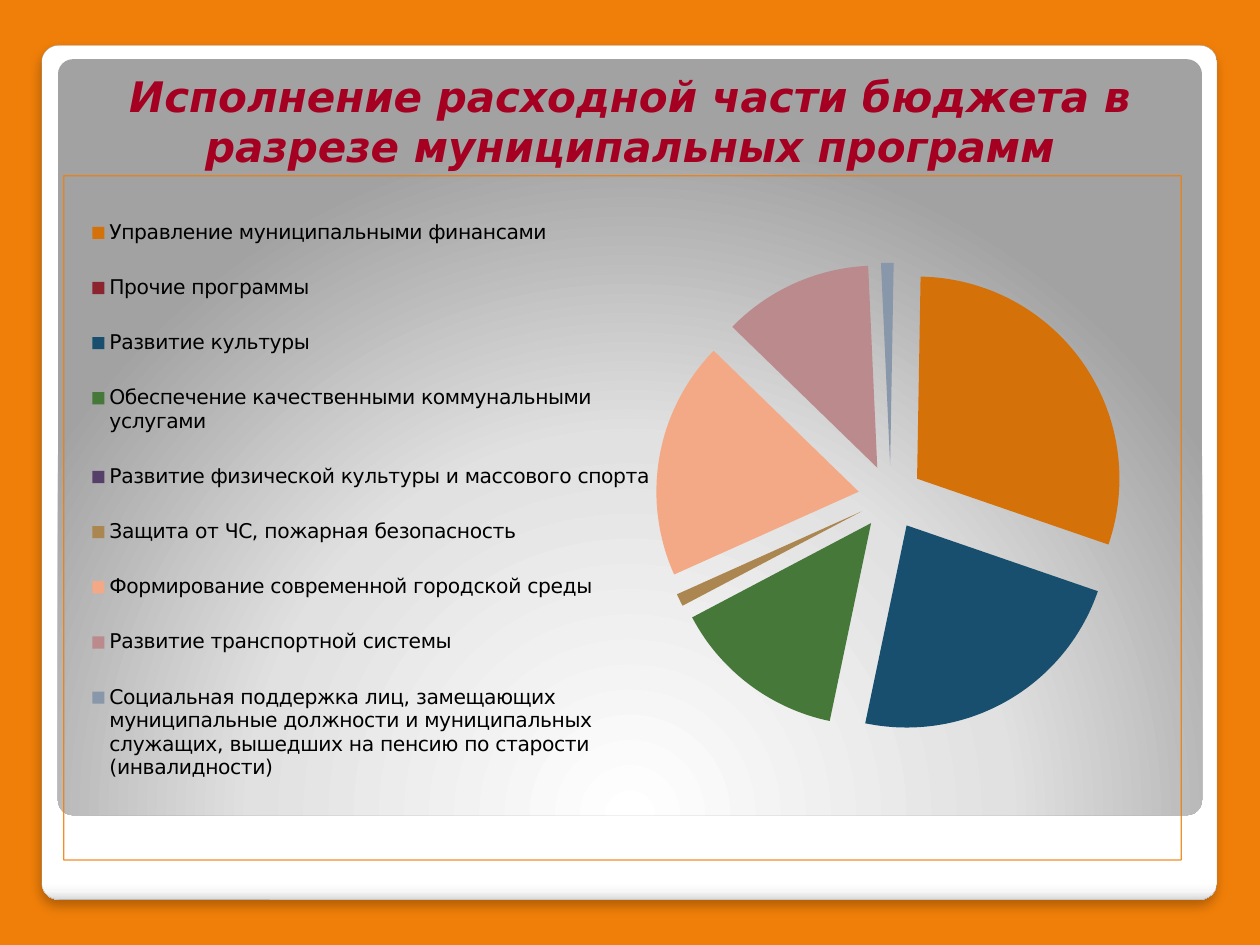
from lxml import etree
from pptx import Presentation
from pptx.chart.data import CategoryChartData
from pptx.dml.color import RGBColor
from pptx.enum.chart import XL_CHART_TYPE as ChartType, XL_LEGEND_POSITION as LegendPosition
from pptx.enum.shapes import MSO_SHAPE as Shape
from pptx.enum.text import MSO_ANCHOR as Anchor, PP_ALIGN as Align
from pptx.oxml import parse_xml
from pptx.oxml.ns import nsdecls, qn
from pptx.util import Inches, Pt

FONT = "DejaVu Sans"
ORANGE = RGBColor(0xF0, 0x7F, 0x09)
CRIMSON = RGBColor(0xA5, 0x00, 0x21)
GRAY = RGBColor(0xA4, 0xA4, 0xA4)
BLACK = RGBColor(0, 0, 0)
WIDTH, HEIGHT = Inches(10), Inches(7.5)

CARD_STOPS = [(0, "FFFFFF"), (98, "FFFFFF"), (99, "F7F7F7"), (100, "DADADA")]
PANEL_STOPS = [(0, "FFFFFF"), (55, "E1E1E1"), (100, "A2A2A2")]
LINEAR = '<a:lin ang="5400000" scaled="0"/>'
RADIAL = ('<a:path path="circle"><a:fillToRect l="50000" t="175000" '
          'r="50000" b="-75000"/></a:path>')
CARD_SHADOW = (f'<a:effectLst {nsdecls("a")}><a:outerShdw blurRad="76200" dist="50800" '
               'dir="5400000" algn="tl" rotWithShape="0"><a:srgbClr val="000000">'
               '<a:alpha val="25000"/></a:srgbClr></a:outerShdw></a:effectLst>')

PROGRAMS = [
    ("Управление муниципальными финансами", 30, RGBColor(0xD5, 0x71, 0x09)),
    ("Прочие программы", 0, RGBColor(0x8C, 0x24, 0x30)),
    ("Развитие культуры", 23, RGBColor(0x18, 0x4F, 0x6F)),
    ("Обеспечение качественными коммунальными услугами", 14, RGBColor(0x46, 0x78, 0x3A)),
    ("Развитие физической культуры и массового спорта", 0, RGBColor(0x56, 0x40, 0x69)),
    ("Защита от ЧС, пожарная безопасность", 1, RGBColor(0xAC, 0x86, 0x50)),
    ("Формирование современной городской среды", 19, RGBColor(0xF4, 0xA9, 0x86)),
    ("Развитие транспортной системы", 12, RGBColor(0xBB, 0x8A, 0x8C)),
    ("Социальная поддержка лиц, замещающих муниципальные должности и муниципальных "
     "служащих, вышедших на пенсию по старости (инвалидности)", 1,
     RGBColor(0x88, 0x97, 0xA9)),
]


def add_panel(slide, box, stops, direction):
    panel = slide.shapes.add_shape(Shape.ROUNDED_RECTANGLE, *box)
    panel.adjustments[0] = 0.02
    panel.shadow.inherit = False
    panel.line.fill.background()
    stop_xml = "".join(f'<a:gs pos="{position * 1000}"><a:srgbClr val="{color}"/></a:gs>'
                       for position, color in stops)
    gradient = parse_xml(f'<a:gradFill {nsdecls("a")} rotWithShape="1">'
                         f'<a:gsLst>{stop_xml}</a:gsLst>{direction}</a:gradFill>')
    panel._element.spPr.find(qn("a:prstGeom")).addnext(gradient)
    return panel


def add_backdrop(slide):
    slide.background.fill.solid()
    slide.background.fill.fore_color.rgb = ORANGE
    card = add_panel(slide, (Inches(0.33), Inches(0.36), Inches(9.33), Inches(6.78)),
                     CARD_STOPS, LINEAR)
    card.line.color.rgb = GRAY
    card.line.width = Pt(0.16)
    properties = card._element.spPr
    properties.replace(properties.find(qn("a:effectLst")), parse_xml(CARD_SHADOW))
    add_panel(slide, (Inches(0.46), Inches(0.47), Inches(9.08), Inches(6)),
              PANEL_STOPS, RADIAL)


def place_title(slide, box):
    title = slide.shapes.title
    slide.shapes._spTree.append(title._element)
    title.left, title.top, title.width, title.height = box
    frame = title.text_frame
    frame.text = "Исполнение расходной части бюджета в разрезе муниципальных программ"
    frame.word_wrap = True
    frame.vertical_anchor = Anchor.BOTTOM
    frame.margin_top = 0
    frame.margin_bottom = Inches(0.05)
    paragraph = frame.paragraphs[0]
    paragraph.alignment = Align.CENTER
    paragraph.line_spacing = 1.0
    font = paragraph.runs[0].font
    font.name, font.size, font.bold, font.italic = FONT, Pt(24), True, True
    font.color.rgb = CRIMSON


def manual_layout(shares, inner=False):
    target = '<c:layoutTarget val="inner"/>' if inner else ""
    modes = '<c:xMode val="edge"/><c:yMode val="edge"/>'
    sizes = "".join(f'<c:{key} val="{share}"/>' for key, share in zip("xywh", shares))
    return parse_xml(f'<c:layout {nsdecls("c")}><c:manualLayout>{target}{modes}{sizes}'
                     '</c:manualLayout></c:layout>')


def set_layout(parent, layout, before=None):
    for existing in parent.findall(qn("c:layout")):
        parent.remove(existing)
    if before is None:
        parent.insert(0, layout)
    else:
        parent.find(qn(before)).addprevious(layout)


def add_program_pie(slide, box):
    data = CategoryChartData()
    data.categories = [name for name, _, _ in PROGRAMS]
    data.add_series("Series 1", [share for _, share, _ in PROGRAMS])
    chart = slide.shapes.add_chart(ChartType.PIE_EXPLODED, *box, data).chart
    chart.has_title = False
    chart.font.name, chart.font.size = FONT, Pt(18)
    chart.font.color.rgb = BLACK

    plot = chart.plots[0]
    plot.vary_by_categories = True
    plot.has_data_labels = False
    series = plot.series[0]
    for index, (_, _, color) in enumerate(PROGRAMS):
        fill = series.points[index].format.fill
        fill.solid()
        fill.fore_color.rgb = color
    for explosion in series._element.findall(qn("c:explosion")):
        series._element.remove(explosion)
    explosion = parse_xml(f'<c:explosion {nsdecls("c")} val="16"/>')
    series._element.find(qn("c:dPt")).addprevious(explosion)
    pie = plot._element
    for angle in pie.findall(qn("c:firstSliceAng")):
        pie.remove(angle)
    etree.SubElement(pie, qn("c:firstSliceAng")).set("val", "1")

    chart.has_legend = True
    legend = chart.legend
    legend.position = LegendPosition.LEFT
    legend.include_in_layout = False
    legend.font.name, legend.font.size = FONT, Pt(11.6)
    legend.font.color.rgb = BLACK
    set_layout(legend._element, manual_layout((0.02, 0.02, 0.51, 0.91)), "c:overlay")
    plot_area = pie.getparent()
    set_layout(plot_area, manual_layout((0.53, 0.1, 0.42, 0.74), inner=True))

    border = parse_xml(
        f'<c:spPr {nsdecls("c", "a")}><a:noFill/><a:ln w="9525"><a:solidFill>'
        f'<a:srgbClr val="{ORANGE}"><a:alpha val="87000"/></a:srgbClr>'
        '</a:solidFill></a:ln></c:spPr>')
    chart._chartSpace.find(qn("c:chart")).addnext(border)


def main():
    presentation = Presentation()
    presentation.slide_width, presentation.slide_height = WIDTH, HEIGHT
    slide = presentation.slides.add_slide(presentation.slide_layouts[5])
    add_backdrop(slide)
    place_title(slide, (Inches(0.5), Inches(0.58), Inches(9), Inches(0.83)))
    add_program_pie(slide, (Inches(0.5), Inches(1.39), Inches(8.88), Inches(5.44)))
    presentation.save("out.pptx")


if __name__ == "__main__":
    main()
